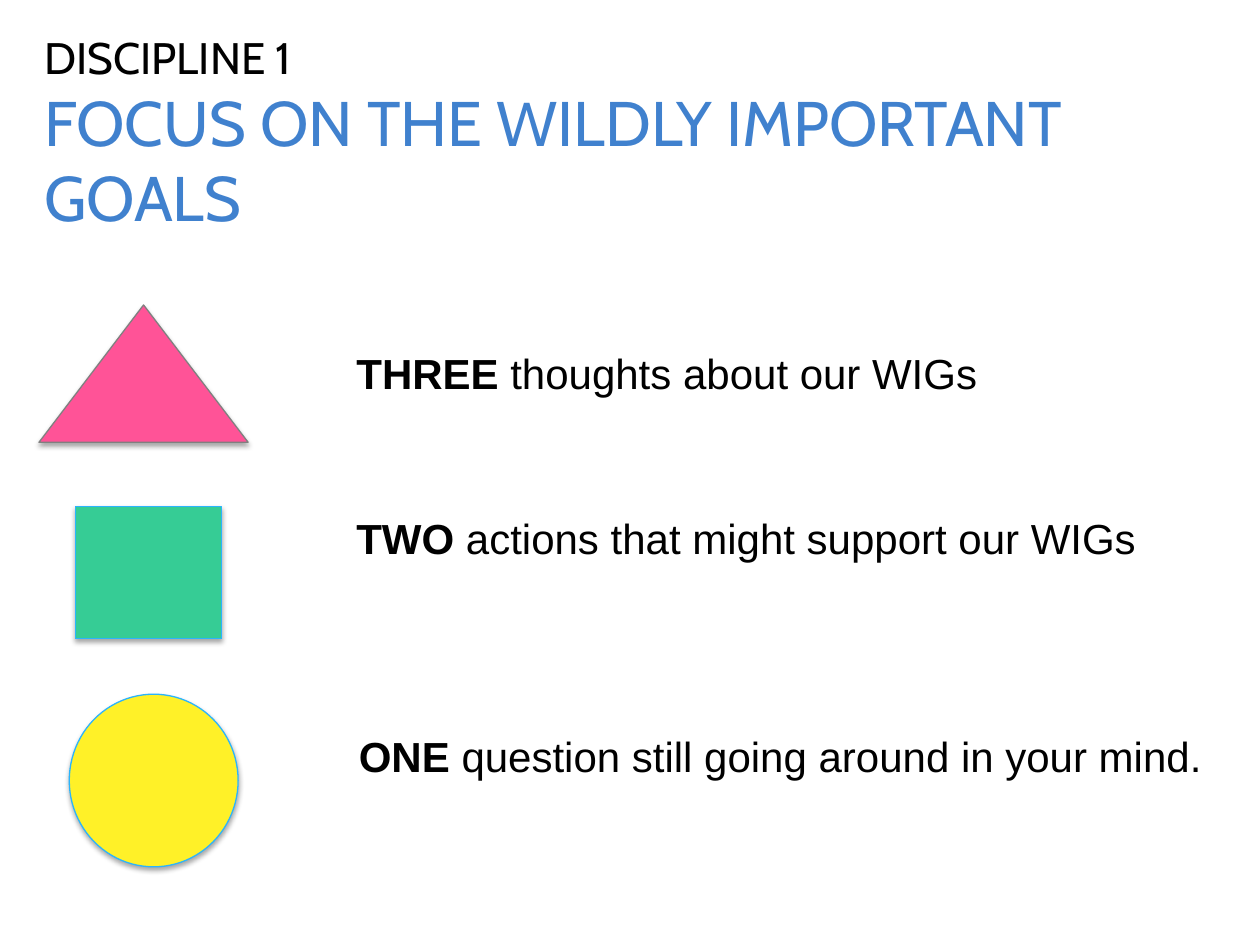
"""Build the Discipline 1 slide: three shapes, each with a reflection prompt."""
from dataclasses import dataclass

from lxml.etree import SubElement
from pptx import Presentation
from pptx.dml.color import RGBColor
from pptx.enum.shapes import MSO_SHAPE as Shape
from pptx.enum.text import MSO_ANCHOR as Anchor, MSO_AUTO_SIZE as Fit, PP_ALIGN as Align
from pptx.oxml.ns import qn
from pptx.util import Inches, Pt


@dataclass(frozen=True)
class Theme:
    heading: str = "Cabin"
    body: str = "Arial"
    ink: str = "000000"
    accent: str = "4081CE"
    pink: str = "FF5397"
    green: str = "36CC95"
    yellow: str = "FFF128"
    gray: str = "808080"
    sky: str = "2BB4FC"
    kicker_size: float = 25.2
    title_size: float = 36
    body_size: float = 24
    outline: float = 0.75


THEME = Theme()
TITLE = ("DISCIPLINE 1", "FOCUS ON THE WILDLY IMPORTANT GOALS")
TITLE_AREA = (0.25, 0.75, 9.5, 0.6)
ICONS = [
    (Shape.ISOSCELES_TRIANGLE, (0.31, 2.42, 1.66, 1.09), THEME.pink, THEME.gray),
    (Shape.RECTANGLE, (0.6, 4.02, 1.16, 1.05), THEME.green, THEME.sky),
    (Shape.OVAL, (0.55, 5.51, 1.34, 1.37), THEME.yellow, THEME.sky),
]
PROMPTS = [
    ("THREE", " thoughts about our WIGs", (2.73, 2.71, 5.18, 0.5)),
    ("TWO", " actions that might support our WIGs", (2.73, 4.02, 6.96, 0.5)),
    ("ONE", " question still going around in your mind.", (2.75, 5.75, 6.96, 0.5)),
]


def inches(area):
    return [Inches(length) for length in area]


def add_span(para, text, font, size, color, bold=False):
    span = para.add_run()
    span.text = text
    span.font.name, span.font.size, span.font.bold = font, Pt(size), bold
    span.font.color.rgb = RGBColor.from_string(color)


def add_shadow(shape):
    shape.shadow.inherit = False
    effects = shape._element.spPr.find(qn("a:effectLst"))
    shadow = SubElement(effects, qn("a:outerShdw"), blurRad=str(Pt(3.1)),
                        dist=str(Pt(1.8)), dir="5400000", rotWithShape="0")
    color = SubElement(shadow, qn("a:srgbClr"), val=THEME.ink)
    SubElement(color, qn("a:alpha"), val="35000")


def add_icon(page, kind, area, fill, line):
    icon = page.shapes.add_shape(kind, *inches(area))
    icon.fill.solid()
    icon.fill.fore_color.rgb = RGBColor.from_string(fill)
    icon.line.color.rgb = RGBColor.from_string(line)
    icon.line.width = Pt(THEME.outline)
    add_shadow(icon)


def add_prompt(page, count, request, area):
    frame = page.shapes.add_textbox(*inches(area)).text_frame
    frame.word_wrap = True
    frame.auto_size = Fit.SHAPE_TO_FIT_TEXT
    para = frame.paragraphs[0]
    add_span(para, count, THEME.body, THEME.body_size, THEME.ink, bold=True)
    add_span(para, request, THEME.body, THEME.body_size, THEME.ink)


def fill_title(page):
    title = page.shapes.title
    title.left, title.top, title.width, title.height = inches(TITLE_AREA)
    frame = title.text_frame
    frame.word_wrap = True
    frame.auto_size = Fit.NONE
    frame.vertical_anchor = Anchor.MIDDLE
    para = frame.paragraphs[0]
    para.alignment = Align.LEFT
    kicker, headline = TITLE
    add_span(para, kicker, THEME.heading, THEME.kicker_size, THEME.ink)
    para.add_line_break()
    line_break = para._p.find(qn("a:br"))
    SubElement(line_break, qn("a:rPr"), sz=str(round(THEME.kicker_size * 100)))
    add_span(para, headline, THEME.heading, THEME.title_size, THEME.accent)


def main():
    deck = Presentation()
    deck.slide_width, deck.slide_height = Inches(10), Inches(7.5)
    page = deck.slides.add_slide(deck.slide_layouts.get_by_name("Title Only"))
    for icon in ICONS:
        add_icon(page, *icon)
    for prompt in PROMPTS:
        add_prompt(page, *prompt)
    fill_title(page)
    deck.save("out.pptx")


if __name__ == "__main__":
    main()
